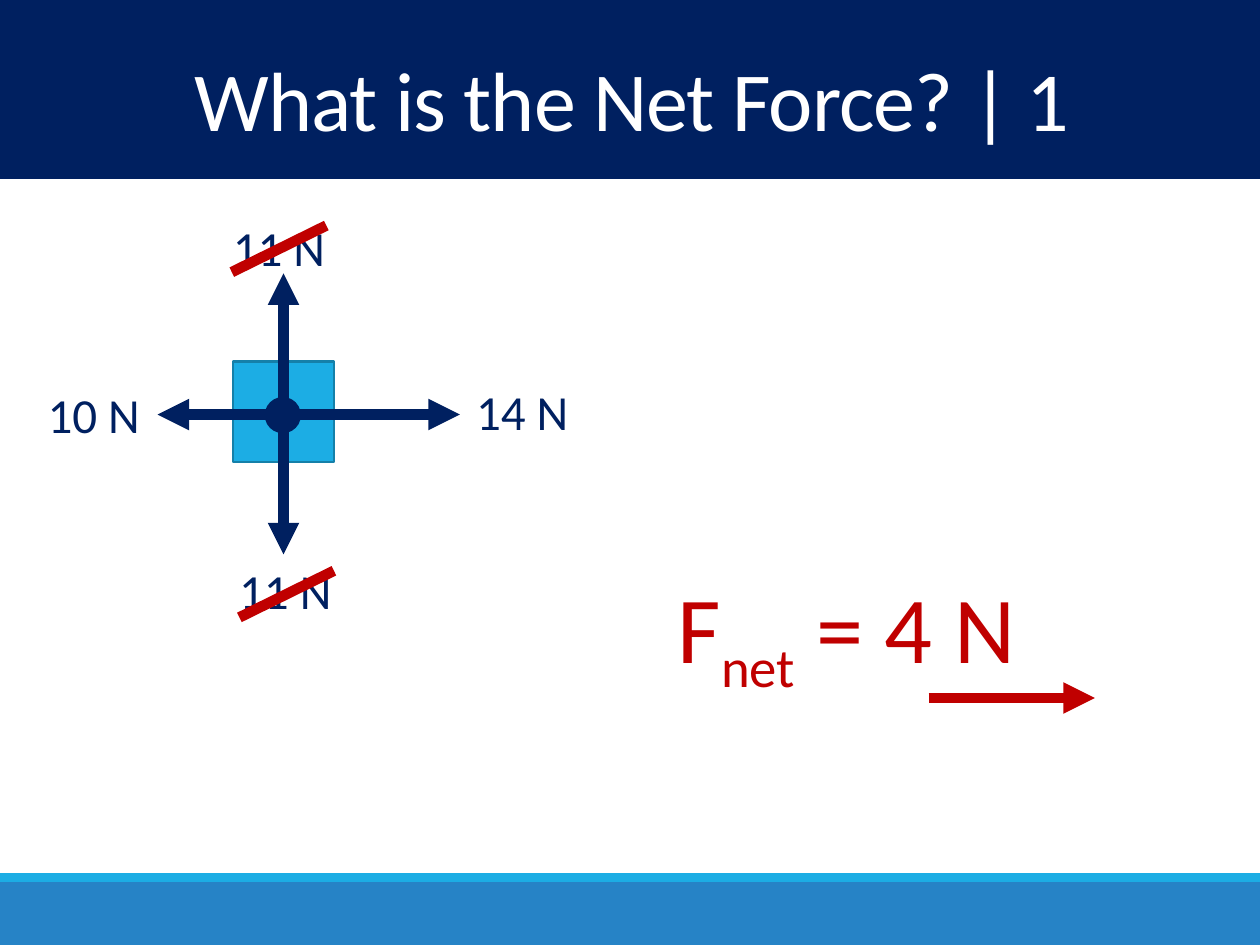
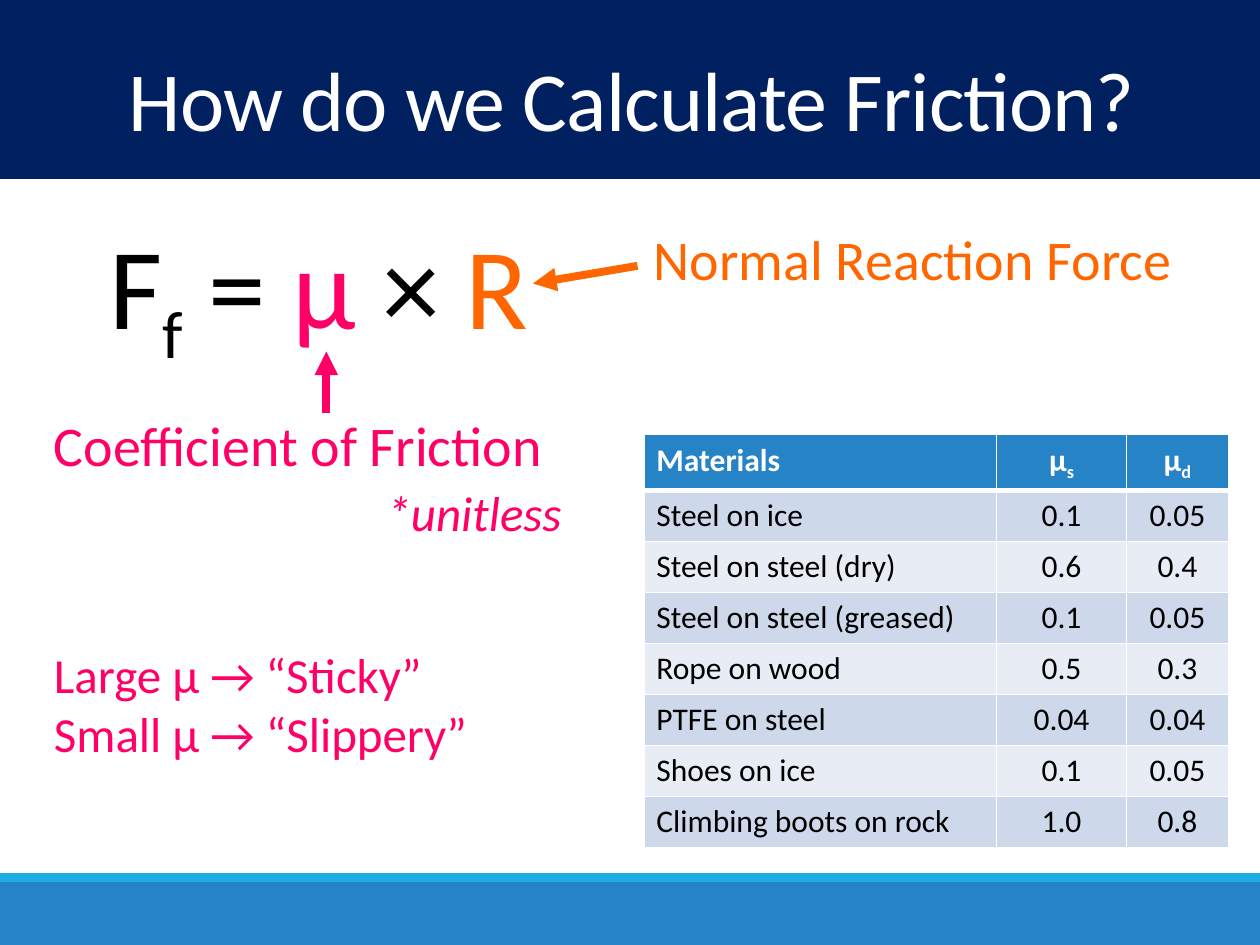
import pptx
import pptx.util
import pptx.dml.color
import pptx.enum.shapes
import pptx.enum.text
import pptx.oxml.ns
import lxml.etree

Inches = pptx.util.Inches
Pt = pptx.util.Pt
Kind = pptx.enum.shapes.MSO_SHAPE
Align = pptx.enum.text.PP_ALIGN
Anchor = pptx.enum.text.MSO_ANCHOR

FONT = "Calibri"
NAVY, BLUE, SKY, TEAL = "002060", "2683C6", "1CADE4", "1580A9"
RED, PINK, ORANGE = "C00000", "FF0066", "FF6600"
BLACK, WHITE = "000000", "FFFFFF"
BANDS = ["CDD9EA", "E8EDF5"]

ROWS = [
    ("Steel on ice", "0.1", "0.05"),
    ("Steel on steel (dry)", "0.6", "0.4"),
    ("Steel on steel (greased)", "0.1", "0.05"),
    ("Rope on wood", "0.5", "0.3"),
    ("PTFE on steel", "0.04", "0.04"),
    ("Shoes on ice", "0.1", "0.05"),
    ("Climbing boots on rock", "1.0", "0.8"),
]


def tint(hue):
    return pptx.dml.color.RGBColor.from_string(hue)


def node(parent, tag, **attrs):
    return lxml.etree.SubElement(parent, pptx.oxml.ns.qn(tag), **attrs)


def style(run, size, hue, bold=False, italic=False, sub=False):
    font = run.font
    font.name = FONT
    font.size = Pt(size)
    font.bold = bold
    font.italic = italic
    font.color.rgb = tint(hue)
    if sub:
        run._r.get_or_add_rPr().set("baseline", "-25000")


def add_runs(para, parts, size, bold=False):
    for text, hue, sub in parts:
        run = para.add_run()
        run.text = text
        style(run, size, hue, bold, sub=sub)


def add_box(slide, left, top, width, height):
    box = slide.shapes.add_textbox(
        Inches(left), Inches(top), Inches(width), Inches(height))
    return box.text_frame


def add_text(slide, place, text, size, hue, italic=False):
    frame = add_box(slide, *place)
    frame.text = text
    for para in frame.paragraphs:
        for run in para.runs:
            style(run, size, hue, italic=italic)
    return frame


def add_shape(slide, kind, place, hue, edge=None):
    shape = slide.shapes.add_shape(kind, *map(Inches, place))
    shape.shadow.inherit = False
    shape.fill.solid()
    shape.fill.fore_color.rgb = tint(hue)
    if edge:
        shape.line.color.rgb = tint(edge)
        shape.line.width = Pt(1.25)
    else:
        shape.line.fill.background()


def add_line(slide, start, end, hue, width=6, arrow=True):
    line = slide.shapes.add_connector(
        pptx.enum.shapes.MSO_CONNECTOR.STRAIGHT, *map(Inches, start + end))
    line.line.color.rgb = tint(hue)
    line.line.width = Pt(width)
    if arrow:
        node(line.line._get_or_add_ln(), "a:tailEnd", type="triangle")
    node(line._element.spPr, "a:effectLst")


def add_frame(deck, title):
    slide = deck.slides.add_slide(deck.slide_layouts[6])
    for top, height, hue in [(7, 0.5, BLUE), (6.93, 0.07, SKY), (0, 1.42, NAVY)]:
        add_shape(slide, Kind.RECTANGLE, (0, top, 10, height), hue)
    frame = add_text(slide, (0.03, 0.42, 9.97, 0.84), title, 48, WHITE)
    frame.word_wrap = True
    frame.vertical_anchor = Anchor.MIDDLE
    para = frame.paragraphs[0]
    para.alignment = Align.CENTER
    para.line_spacing = 0.85
    para.runs[0]._r.get_or_add_rPr().set("spc", "-50")
    return slide


def add_edges(cell, top, base):
    props = cell._tc.get_or_add_tcPr()
    for side, width in [("L", 1), ("R", 1), ("T", top), ("B", base)]:
        edge = node(props, "a:ln" + side, w=str(Pt(width)))
        node(node(edge, "a:solidFill"), "a:srgbClr", val=WHITE)


def add_table(slide):
    heads = [[("Materials", WHITE, False)]]
    heads += [[("μ", WHITE, False), (sub, WHITE, True)] for sub in "sd"]
    body = [[[(text, BLACK, False)] for text in row] for row in ROWS]
    lines = [heads] + body
    table = slide.shapes.add_table(
        len(lines), 3, Inches(5.11), Inches(3.45), Inches(4.64), Inches(3.24)).table
    for col, width in zip(table.columns, (2.8, 1.03, 0.81)):
        col.width = Inches(width)
    for r, line in enumerate(lines):
        for c, parts in enumerate(line):
            cell = table.cell(r, c)
            add_edges(cell, 3 if r == 1 else 1, 3 if r == 0 else 1)
            cell.fill.solid()
            cell.fill.fore_color.rgb = tint(BANDS[(r - 1) % 2] if r else BLUE)
            para = cell.text_frame.paragraphs[0]
            para.alignment = Align.CENTER if c else Align.LEFT
            add_runs(para, parts, 18, bold=r == 0)


def add_force(slide, hub, tip, text, spot):
    add_line(slide, hub, tip, NAVY)
    add_text(slide, spot + (0.94, 0.57), text, 28, NAVY)


def net_force(deck):
    slide = add_frame(deck, "What is the Net Force? | 1")
    add_shape(slide, Kind.RECTANGLE, (1.85, 2.87, 0.8, 0.8), SKY, TEAL)
    hub = (2.25, 3.29)
    forces = [
        ((1.25, 3.29), "10 N", (0.28, 3)),
        ((3.65, 3.29), "14 N", (3.68, 2.98)),
        ((2.25, 4.4), "11 N", (1.8, 4.4)),
        ((2.25, 2.17), "11 N", (1.75, 1.68)),
    ]
    for tip, text, spot in forces:
        add_force(slide, hub, tip, text, spot)
    add_shape(slide, Kind.OVAL, (2.11, 3.16, 0.27, 0.27), NAVY, NAVY)
    frame = add_box(slide, 5.28, 4.47, 3.41, 1.01)
    add_runs(frame.paragraphs[0], [
        ("F", RED, False), ("net", RED, True), (" = 4 N", RED, False)], 54)
    add_line(slide, (7.37, 5.54), (8.69, 5.54), RED)
    for left, base in [(1.9, 4.9), (1.84, 2.16)]:
        add_line(slide, (left, base), (left + 0.75, base - 0.37), RED, arrow=False)


def friction(deck):
    slide = add_frame(deck, "How do we Calculate Friction?")
    frame = add_box(slide, 0.77, 1.65, 3.56, 1.21)
    add_runs(frame.paragraphs[0], [
        ("F", BLACK, False), ("f", BLACK, True), (" = ", BLACK, False),
        ("μ", PINK, False), (" × ", BLACK, False), ("R", ORANGE, False)], 66)
    add_text(slide, (0.33, 3.21, 4.44, 0.64), "Coefficient of Friction", 32, PINK)
    add_line(slide, (2.59, 3.28), (2.59, 2.79), PINK, 4.5)
    add_text(slide, (2.97, 3.78, 1.67, 0.57), "*unitless", 28, PINK, italic=True)
    add_text(slide, (5.09, 1.73, 4.72, 0.64), "Normal Reaction Force", 32, ORANGE)
    add_line(slide, (5.06, 2.11), (4.23, 2.25), ORANGE, 4.5)
    add_text(slide, (0.33, 5.07, 3.76, 1.04),
             "Large μ → “Sticky”\nSmall μ → “Slippery”", 28, PINK)
    add_table(slide)


def main():
    deck = pptx.Presentation()
    deck.slide_width = Inches(10)
    deck.slide_height = Inches(7.5)
    net_force(deck)
    friction(deck)
    deck.save("out.pptx")


if __name__ == "__main__":
    main()
